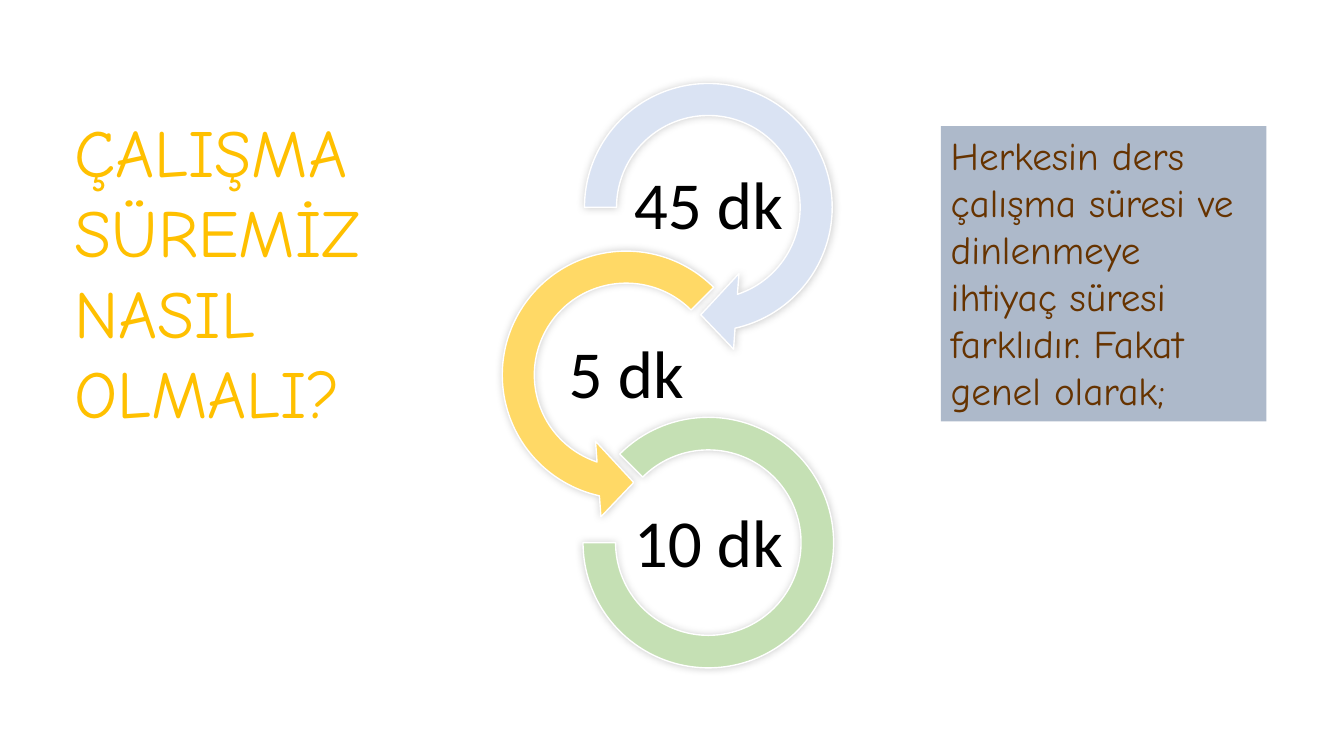
from dataclasses import dataclass

from lxml import etree
from pptx import Presentation
from pptx.dml.color import RGBColor
from pptx.enum.shapes import MSO_SHAPE
from pptx.enum.text import MSO_ANCHOR, MSO_AUTO_SIZE, PP_ALIGN
from pptx.oxml.ns import qn
from pptx.util import Inches, Pt

RIGHT_ARROW = MSO_SHAPE.CIRCULAR_ARROW
LEFT_ARROW = MSO_SHAPE.LEFT_CIRCULAR_ARROW
ARC = MSO_SHAPE.BLOCK_ARC
RECTANGLE = MSO_SHAPE.RECTANGLE
LEFT, CENTER = PP_ALIGN.LEFT, PP_ALIGN.CENTER
TOP, MIDDLE = MSO_ANCHOR.TOP, MSO_ANCHOR.MIDDLE
NO_FIT = MSO_AUTO_SIZE.NONE
TITLE_ONLY = 5


@dataclass(frozen=True)
class Theme:
    """Colours, fonts and type sizes of the slide."""
    title: str = "FFC000"
    note: str = "663300"
    note_fill: str = "ADB9CA"
    label: str = "000000"
    outline: str = "FFFFFF"
    shadow: str = "000000"
    study: str = "DAE3F3"
    short_break: str = "FFD966"
    review: str = "C5E0B4"
    hand_font: str = "Comic Neue"
    label_font: str = "Calibri"
    large: int = 48
    medium: int = 28


@dataclass(frozen=True)
class Box:
    """A rectangle on the slide in slide units."""
    left: float
    top: float
    width: float
    height: float

    def bounds(self):
        """Return the four whole lengths that a shape needs."""
        return [int(length) for length in (self.left, self.top, self.width, self.height)]


THEME = Theme()
STAGES = [
    ("45 dk", RIGHT_ARROW, THEME.study, (0.11, 11.42, 45, 108, 0.13), 1, 1),
    ("5 dk", LEFT_ARROW, THEME.short_break, (0.11, 11.42, 63, 189, 0.13), 0, 1),
    ("10 dk", ARC, THEME.review, (135, 108, 0.13), 1, 0.86),
]


def share_box(deck, left, top, width, height):
    """Turn percentages of the slide into a box."""
    across, down = deck.slide_width / 100, deck.slide_height / 100
    return Box(left * across, top * down, width * across, height * down)


def centred_box(x, y, width, height):
    """Return a box around a centre point."""
    return Box(x - width / 2, y - height / 2, width, height)


def write(shape, text, *, font, size, color, align=LEFT, anchor=TOP, spacing=1.0, inset=None):
    """Write one formatted paragraph into a shape."""
    frame = shape.text_frame
    frame.word_wrap = True
    frame.auto_size = NO_FIT
    frame.vertical_anchor = anchor
    if inset is not None:
        frame.margin_left = frame.margin_right = inset
        frame.margin_top = frame.margin_bottom = inset
    para = frame.paragraphs[0]
    para.alignment = align
    para.line_spacing = spacing
    span = para.add_run()
    span.text = text
    span.font.name = font
    span.font.size = Pt(size)
    span.font.color.rgb = RGBColor.from_string(color)


def fill(shape, color):
    """Give a shape a plain fill and no shadow."""
    shape.shadow.inherit = False
    shape.fill.solid()
    shape.fill.fore_color.rgb = RGBColor.from_string(color)


def soften(shape):
    """Add a faint blurred shadow to a shape."""
    effects = shape._element.spPr.find(qn("a:effectLst"))
    shadow = etree.SubElement(effects, qn("a:outerShdw"), blurRad=str(Pt(6)), dist="0",
                              dir=str(315 * 60000), algn="ctr", rotWithShape="0")
    color = etree.SubElement(shadow, qn("a:srgbClr"), val=THEME.shadow)
    etree.SubElement(color, qn("a:alpha"), val="20000")


def add_title(page, box):
    """Place the question in the title placeholder."""
    title = page.shapes.title
    title.left, title.top, title.width, title.height = box.bounds()
    write(title, "ÇALIŞMA SÜREMİZ NASIL OLMALI?", font=THEME.hand_font,
          size=THEME.large, color=THEME.title)


def add_stages(page, box):
    """Draw the chain of rings, alternating sides, with a time in each."""
    ring = box.width * 0.78
    last_scale = STAGES[-1][-1]
    step = (box.height - ring * (1 + last_scale) / 2) / (len(STAGES) - 1)
    for index, (text, kind, color, adjustments, side, scale) in enumerate(STAGES):
        x = box.left + ring / 2 + side * (box.width - ring)
        y = box.top + ring / 2
        area = centred_box(x, y + index * step, ring * scale, ring * scale)
        shape = page.shapes.add_shape(kind, *area.bounds())
        for place, value in enumerate(adjustments):
            shape.adjustments[place] = value
        fill(shape, color)
        shape.line.color.rgb = RGBColor.from_string(THEME.outline)
        shape.line.width = Pt(1)
        soften(shape)
        area = centred_box(x, y + index * step * 1.01, ring * 0.56, ring * 0.28)
        label = page.shapes.add_textbox(*area.bounds())
        write(label, text, font=THEME.label_font, size=THEME.large, color=THEME.label,
              align=CENTER, anchor=MIDDLE, spacing=0.9, inset=Inches(0.03))


def add_note(page, box):
    """Place the explanation on its filled panel."""
    panel = page.shapes.add_shape(RECTANGLE, *box.bounds())
    fill(panel, THEME.note_fill)
    panel.line.fill.background()
    write(panel, "Herkesin ders çalışma süresi ve dinlenmeye ihtiyaç süresi farklıdır. "
          "Fakat genel olarak;", font=THEME.hand_font, size=THEME.medium, color=THEME.note)


def main():
    """Build the deck and save it."""
    deck = Presentation()
    deck.slide_width, deck.slide_height = Inches(13.33), Inches(7.5)
    page = deck.slides.add_slide(deck.slide_layouts[TITLE_ONLY])
    add_stages(page, share_box(deck, 35.75, 8.15, 27.8, 80.2))
    add_title(page, share_box(deck, 4.8, 13.87, 27.91, 44.4))
    add_note(page, share_box(deck, 70, 16.67, 24.23, 39.07))
    deck.save("out.pptx")


if __name__ == "__main__":
    main()
